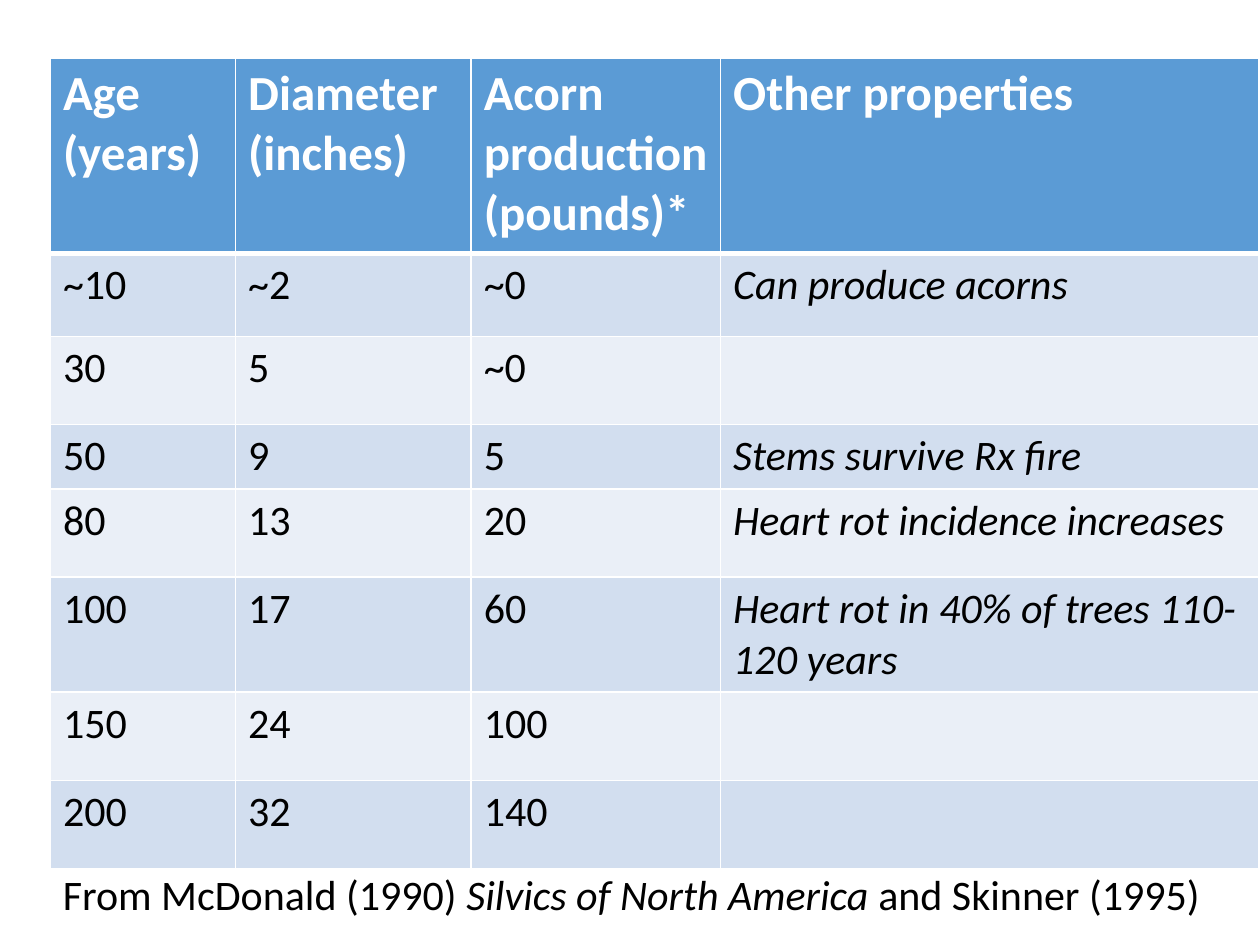
"""Build a slide with a table of oak age, size and acorn production."""
from lxml import etree
from pptx import Presentation
from pptx import util as u
from pptx.dml.color import RGBColor
from pptx.oxml.ns import qn

FONT = "Calibri"
WHITE = RGBColor(0xFF, 0xFF, 0xFF)
BLACK = RGBColor(0x00, 0x00, 0x00)
BLUE = RGBColor(0x5B, 0x9B, 0xD5)
BANDS = [RGBColor(0xEA, 0xEF, 0xF7), RGBColor(0xD2, 0xDE, 0xEF)]

ROWS = [
    ("Age (years)", "Diameter (inches)", "Acorn production (pounds)*", "Other properties"),
    ("~10", "~2", "~0", "Can produce acorns"),
    ("30", "5", "~0", ""),
    ("50", "9", "5", "Stems survive Rx fire"),
    ("80", "13", "20", "Heart rot incidence increases"),
    ("100", "17", "60", "Heart rot in 40% of trees 110-120 years"),
    ("150", "24", "100", ""),
    ("200", "32", "140", ""),
]
WIDTHS = [1.47, 1.87, 1.98, 4.27]
HEIGHTS = [1.55, 0.66, 0.7, 0.51, 0.7, 0.7, 0.7, 0.7]
SOURCE = [
    ("From McDonald (1990) ", False),
    ("Silvics of North America ", True),
    ("and Skinner (1995)", False),
]


def add_span(para, words, size, color, bold=False, italic=False):
    span = para.add_run()
    span.text = words
    span.font.name = FONT
    span.font.size = u.Pt(size)
    span.font.color.rgb = color
    span.font.bold = bold
    span.font.italic = italic


def set_borders(cell, widths):
    properties = cell._tc.get_or_add_tcPr()
    for side, width in widths.items():
        line = etree.SubElement(properties, qn(f"a:ln{side}"), w=str(u.Pt(width)))
        fill = etree.SubElement(line, qn("a:solidFill"))
        etree.SubElement(fill, qn("a:srgbClr"), val=str(WHITE))


def add_growth_table(slide):
    frame = slide.shapes.add_table(
        len(ROWS), len(WIDTHS), u.Inches(0.4), u.Inches(0.46),
        u.Inches(sum(WIDTHS)), u.Inches(sum(HEIGHTS)))
    table = frame.table
    for column, width in zip(table.columns, WIDTHS):
        column.width = u.Inches(width)
    for row, height in zip(table.rows, HEIGHTS):
        row.height = u.Inches(height)
    for r, values in enumerate(ROWS):
        header = r == 0
        for c, value in enumerate(values):
            cell = table.cell(r, c)
            set_borders(cell, {"L": 1, "R": 1, "T": 3 if r == 1 else 1, "B": 3 if header else 1})
            cell.fill.solid()
            cell.fill.fore_color.rgb = BLUE if header else BANDS[r % 2]
            if value:
                add_span(cell.text_frame.paragraphs[0], value,
                         28 if header else 24, WHITE if header else BLACK,
                         bold=header, italic=not header and c == 3)


def add_source(slide):
    box = slide.shapes.add_textbox(u.Inches(0.4), u.Inches(6.84), u.Inches(9.31), u.Inches(0.5))
    box.text_frame.word_wrap = True
    para = box.text_frame.paragraphs[0]
    for words, italic in SOURCE:
        add_span(para, words, 24, BLACK, italic=italic)


def main():
    deck = Presentation()
    deck.slide_width, deck.slide_height = u.Inches(10), u.Inches(7.5)
    slide = deck.slides.add_slide(deck.slide_layouts[6])
    add_growth_table(slide)
    add_source(slide)
    deck.save("out.pptx")


if __name__ == "__main__":
    main()
